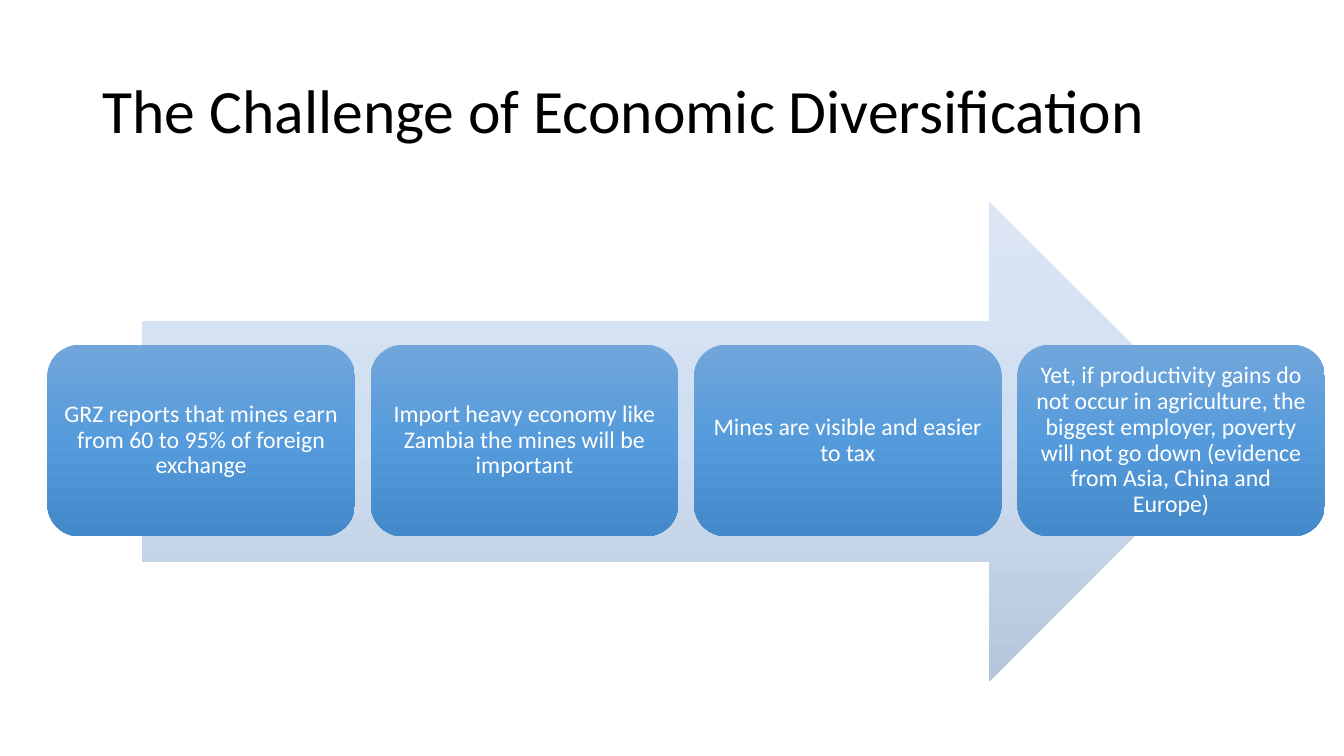
from dataclasses import dataclass

from lxml.etree import SubElement
from pptx import Presentation
from pptx.dml.color import RGBColor
from pptx.enum.shapes import MSO_SHAPE
from pptx.enum.text import MSO_ANCHOR, PP_ALIGN
from pptx.oxml.ns import qn
from pptx.util import Inches, Pt


@dataclass(frozen=True)
class Theme:
    font: str = "Calibri"
    title_size: int = 44
    step_size: int = 17
    line_spacing: float = 0.9
    title_color: str = "000000"
    step_color: str = "FFFFFF"
    arrow_gradient: tuple = ("DBE5F3", "D0DEF1", "B6C5D9")
    step_gradient: tuple = ("71A6DB", "559BDB", "448ACA")


class SlideBuilder:
    def __init__(self, slide, theme):
        self.slide = slide
        self.theme = theme

    def fill_text(self, frame, text, size, color, align):
        frame.word_wrap = True
        frame.vertical_anchor = MSO_ANCHOR.MIDDLE
        paragraph = frame.paragraphs[0]
        paragraph.alignment = align
        paragraph.line_spacing = self.theme.line_spacing
        run = paragraph.add_run()
        run.text = text
        run.font.name = self.theme.font
        run.font.size = Pt(size)
        run.font.color.rgb = RGBColor.from_string(color)

    def title(self, text, left, top, width, height):
        box = self.slide.shapes.add_textbox(
            Inches(left), Inches(top), Inches(width), Inches(height))
        self.fill_text(box.text_frame, text, self.theme.title_size,
                       self.theme.title_color, PP_ALIGN.LEFT)

    def gradient_shape(self, kind, colors, left, top, width, height):
        shape = self.slide.shapes.add_shape(
            kind, Inches(left), Inches(top), Inches(width), Inches(height))
        shape.shadow.inherit = False
        shape.line.fill.background()
        shape.fill.gradient()
        shape.fill.gradient_angle = 270  # top to bottom
        # Evenly spaced colour stops
        stops = shape._element.spPr.find(qn("a:gradFill")).find(qn("a:gsLst"))
        for stop in list(stops):
            stops.remove(stop)
        for i, color in enumerate(colors):
            position = 100000 * i // (len(colors) - 1)
            stop = SubElement(stops, qn("a:gs"), pos=str(position))
            SubElement(stop, qn("a:srgbClr"), val=color)
        return shape

    def arrow(self, left, top, width, height):
        self.gradient_shape(MSO_SHAPE.RIGHT_ARROW, self.theme.arrow_gradient,
                            left, top, width, height)

    def step(self, text, left, top, width, height):
        card = self.gradient_shape(MSO_SHAPE.ROUNDED_RECTANGLE,
                                   self.theme.step_gradient,
                                   left, top, width, height)
        frame = card.text_frame
        frame.margin_left = frame.margin_right = Inches(0.07)
        frame.margin_top = frame.margin_bottom = Inches(0.07)
        self.fill_text(frame, text, self.theme.step_size,
                       self.theme.step_color, PP_ALIGN.CENTER)


STEPS = (
    "GRZ reports that mines earn from 60 to 95% of foreign exchange",
    "Import heavy economy like Zambia the mines will be important",
    "Mines are visible and easier to tax",
    "Yet, if productivity gains do not occur in agriculture, the biggest "
    "employer, poverty will not go down (evidence from Asia, China and Europe)",
)
FIRST_STEP, LAST_STEP = 0.47, 10.09


def main():
    deck = Presentation()
    deck.slide_width, deck.slide_height = Inches(13.33), Inches(7.5)
    builder = SlideBuilder(deck.slides.add_slide(deck.slide_layouts[6]), Theme())

    # Title
    builder.title("The Challenge of Economic Diversification",
                  0.92, 0.4, 11.5, 1.45)

    # Process arrow behind the steps
    builder.arrow(1.41, 2, 10.78, 4.76)

    # Evenly spaced steps
    pitch = (LAST_STEP - FIRST_STEP) / (len(STEPS) - 1)
    for i, text in enumerate(STEPS):
        builder.step(text, FIRST_STEP + i * pitch, 3.42, 3.05, 1.9)

    deck.save("out.pptx")


if __name__ == "__main__":
    main()
